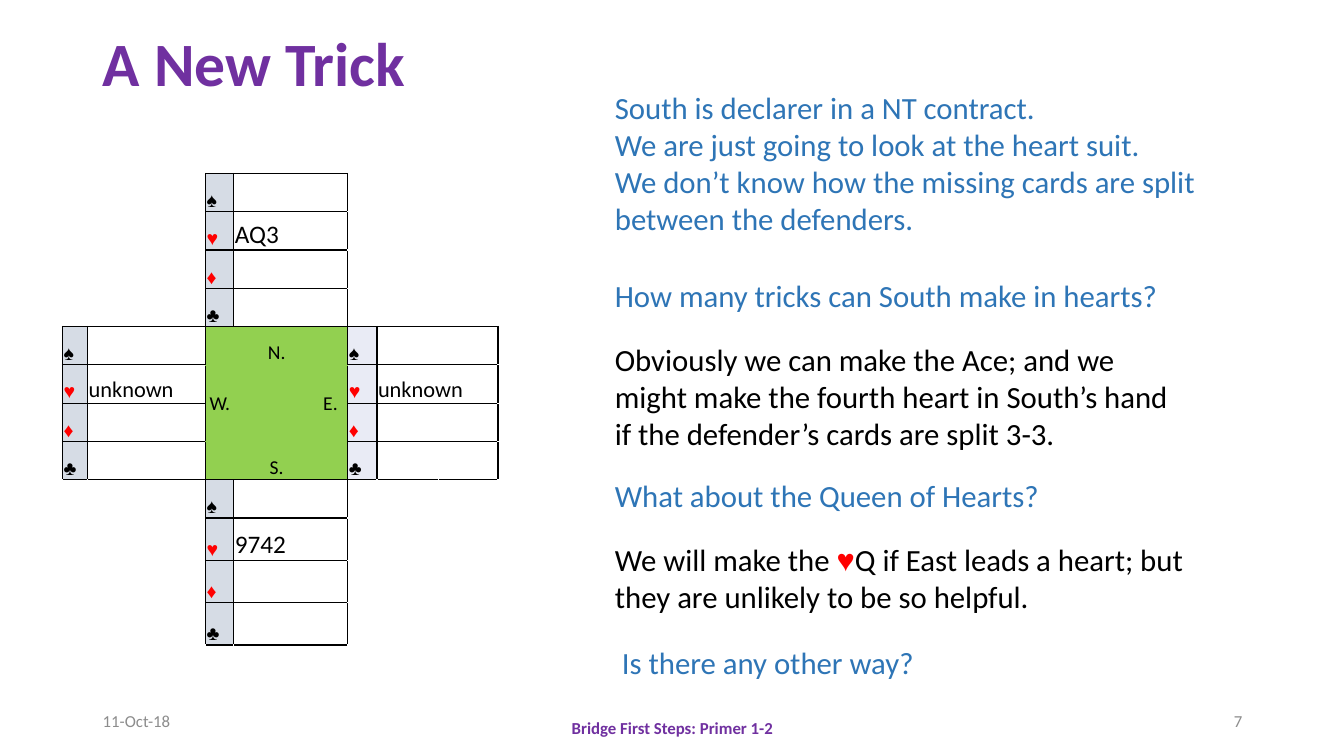
from lxml.etree import SubElement
from pptx import Presentation
from pptx.dml.color import RGBColor
from pptx.enum.text import MSO_ANCHOR, MSO_AUTO_SIZE, PP_ALIGN
from pptx.oxml.ns import qn
from pptx.util import Inches, Pt

PURPLE = RGBColor(0x70, 0x30, 0xA0)
BLUE = RGBColor(0x2E, 0x75, 0xB6)
BLACK = RGBColor(0, 0, 0)
WHITE = RGBColor(255, 255, 255)
RED = RGBColor(255, 0, 0)
GREY = RGBColor(0x8C, 0x8C, 0x8C)
GREEN = RGBColor(0x92, 0xD0, 0x50)
SUIT_GREY = RGBColor(0xD6, 0xDC, 0xE5)
SUIT_PALE = RGBColor(0xE9, 0xEB, 0xF5)


def style(paragraph, size, colour, font="Calibri", bold=False, align=PP_ALIGN.LEFT):
    paragraph.alignment = align
    paragraph.font.size = Pt(size)
    paragraph.font.name = font
    paragraph.font.bold = bold
    paragraph.font.color.rgb = colour


def add_text(left, top, width, height, text):
    box = slide.shapes.add_textbox(Inches(left), Inches(top), Inches(width), Inches(height))
    box.text_frame.word_wrap = True
    box.text_frame.text = text
    return box.text_frame


deck = Presentation()
deck.slide_width, deck.slide_height = Inches(13.33), Inches(7.5)
slide = deck.slides.add_slide(deck.slide_layouts[5])

title = slide.shapes.title
title.left, title.top = Inches(0.92), Inches(0.4)
title.width, title.height = Inches(11.5), Inches(0.52)
title.text_frame.text = "A New Trick"
title.text_frame.vertical_anchor = MSO_ANCHOR.MIDDLE
title.text_frame.paragraphs[0].line_spacing = 0.9
style(title.text_frame.paragraphs[0], 44, PURPLE, bold=True)

column_widths = [0.3, 0.25, 1.17, 0.28, 1.13, 0.29, 0.61, 0.59, 0.64]
row_heights = [0.28] + [0.38] * 9 + [0.42] * 3 + [0.3]
deal = slide.shapes.add_table(
    len(row_heights), len(column_widths),
    Inches(0.32), Inches(1.44), Inches(5.25), Inches(5.28)).table
deal.first_row = deal.horz_banding = False
for column, width in zip(deal.columns, column_widths):
    column.width = Inches(width)
for row, height in zip(deal.rows, row_heights):
    row.height = Inches(height)

hands = [
    (1, 3, "AQ3", 18, SUIT_GREY, 1),
    (5, 1, "unknown", 16, SUIT_GREY, 1),
    (5, 5, "unknown", 16, SUIT_PALE, 2),
    (9, 3, "9742", 18, SUIT_GREY, 1),
]
seats = [
    (5, 3, "N.", PP_ALIGN.CENTER, MSO_ANCHOR.BOTTOM),
    (6, 3, "W.", PP_ALIGN.CENTER, MSO_ANCHOR.MIDDLE),
    (6, 4, "E.", PP_ALIGN.RIGHT, MSO_ANCHOR.MIDDLE),
    (8, 3, "S.", PP_ALIGN.CENTER, MSO_ANCHOR.BOTTOM),
]
merges = [(1, 1, 1, 2), (2, 1, 2, 2), (5, 3, 5, 4), (6, 3, 7, 3), (6, 4, 7, 4), (8, 3, 8, 4)]
merges += [(row, 6, row, 7) for row in range(5, 9)]
spans = {}
for top, left, bottom, right in merges:
    deal.cell(top, left).merge(deal.cell(bottom, right))
    spans[top, left] = bottom, right

areas = {(row, col): "centre" for row in range(5, 9) for col in (3, 4)}
texts = {}
fills = {place: GREEN for place in areas}
for top, left, cards, size, suit_fill, card_columns in hands:
    for offset, suit in enumerate("♠♥♦♣"):
        row = top + offset
        suit_colour = RED if suit in "♥♦" else BLACK
        texts[row, left] = suit, 14, suit_colour, "Arial", PP_ALIGN.LEFT, MSO_ANCHOR.BOTTOM
        fills[row, left] = suit_fill
        for col in range(left, left + 1 + card_columns):
            areas[row, col] = "hand"
    texts[top + 1, left + 1] = cards, size, BLACK, "Calibri", PP_ALIGN.LEFT, MSO_ANCHOR.BOTTOM
for row, col, seat, align, anchor in seats:
    texts[row, col] = seat, 14, BLACK, "Calibri", align, anchor

blank = "", 14, BLACK, "Calibri", PP_ALIGN.LEFT, MSO_ANCHOR.BOTTOM
for row in range(len(row_heights)):
    for col in range(len(column_widths)):
        cell = deal.cell(row, col)
        text, size, colour, font, align, anchor = texts.get((row, col), blank)
        cell.text = text
        style(cell.text_frame.paragraphs[0], size, colour, font, align=align)
        cell.vertical_anchor = anchor
        cell.margin_left = cell.margin_top = Inches(0.01)
        cell.margin_right = Inches(0.1 if text == "E." else 0.01)
        cell.margin_bottom = 0
        if not cell.is_spanned:
            bottom, right = spans.get((row, col), (row, col))
            area = areas.get((row, col))
            neighbours = {
                "a:lnL": (row, col - 1), "a:lnR": (row, right + 1),
                "a:lnT": (row - 1, col), "a:lnB": (bottom + 1, col),
            }
            for edge, neighbour in neighbours.items():
                next_area = areas.get(neighbour)
                if area == next_area == "centre":
                    edge_colour, edge_width = GREEN, 0.25
                else:
                    edge_colour, edge_width = (BLACK if area or next_area else WHITE), 1
                line = SubElement(cell._tc.get_or_add_tcPr(), qn(edge), w=str(Pt(edge_width)))
                SubElement(SubElement(line, qn("a:solidFill")), qn("a:srgbClr"), val=str(edge_colour))
        if (row, col) in fills:
            cell.fill.solid()
            cell.fill.fore_color.rgb = fills[row, col]
        else:
            cell.fill.background()

footers = [
    (0.92, 6.95, 3, "11-Oct-18", GREY, False, PP_ALIGN.LEFT),
    (4.42, 7.02, 4.5, "Bridge First Steps: Primer 1-2", PURPLE, True, PP_ALIGN.CENTER),
    (9.42, 6.95, 3, "7", GREY, False, PP_ALIGN.RIGHT),
]
for left, top, width, text, colour, bold, align in footers:
    footer = add_text(left, top, width, 0.4, text)
    footer.vertical_anchor = MSO_ANCHOR.MIDDLE
    style(footer.paragraphs[0], 12, colour, bold=bold, align=align)

comments = [
    (6, 0.83, 6.69, 1.58, BLUE,
     "South is declarer in a NT contract.\vWe are just going to look at the heart suit.\n"
     "We don’t know how the missing cards are split between the defenders."),
    (6, 2.7, 5.7, 0.47, BLUE, "How many tricks can South make in hearts?"),
    (6, 3.33, 5.7, 1.21, BLACK,
     "Obviously we can make the Ace; and we might make the fourth heart in South’s hand "
     "if the defender’s cards are split 3-3."),
    (6, 4.68, 5.23, 0.47, BLUE, "What about the Queen of Hearts?"),
    (6, 5.32, 6.32, 0.84, BLACK, "We will make the "),
    (6.07, 6.34, 5.1, 0.47, BLUE, "Is there any other way?"),
]
for left, top, width, height, colour, text in comments:
    comment = add_text(left, top, width, height, text)
    comment.auto_size = MSO_AUTO_SIZE.SHAPE_TO_FIT_TEXT
    for paragraph in comment.paragraphs:
        style(paragraph, 22, colour)
    if text == "We will make the ":
        heart = comment.paragraphs[0].add_run()
        heart.text = "♥"
        heart.font.name = "Arial"
        heart.font.color.rgb = RED
        comment.paragraphs[0].add_run().text = (
            "Q if East leads a heart; but they are unlikely to be so helpful.")

deck.save("out.pptx")
